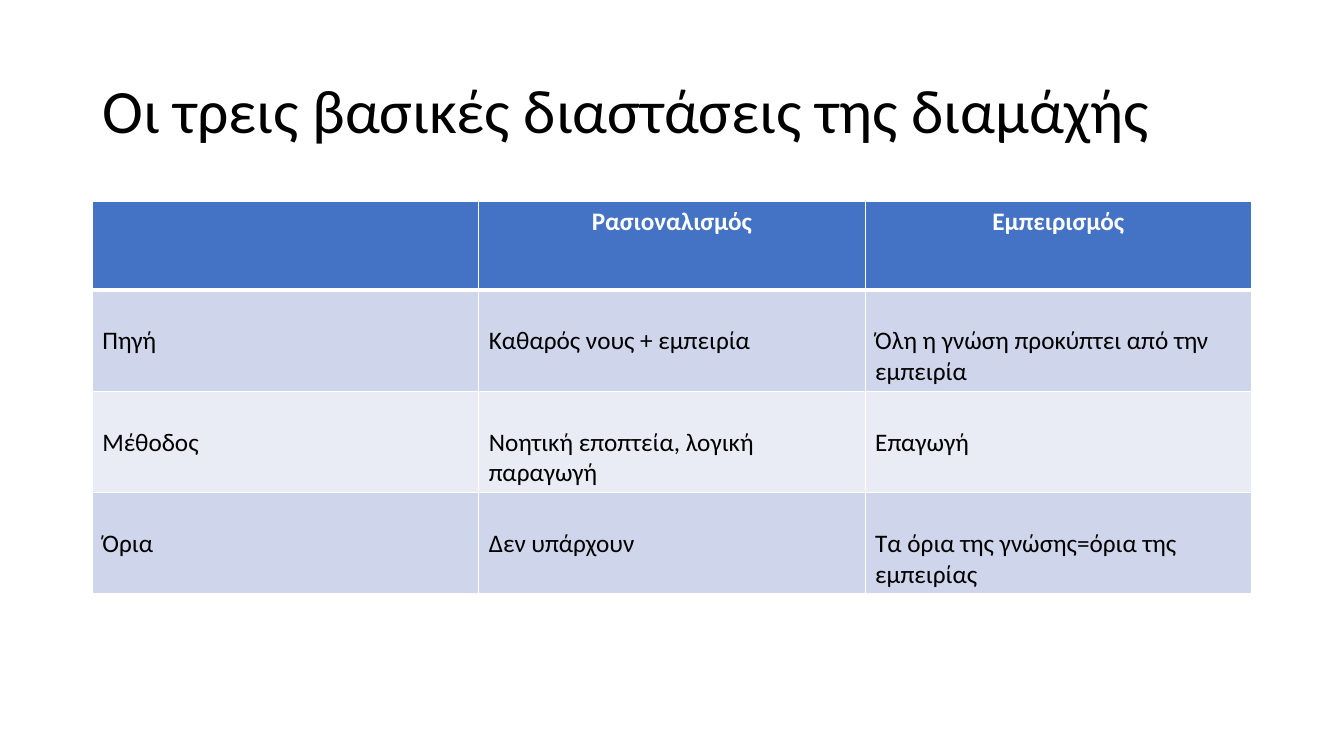
from dataclasses import dataclass

from lxml.etree import SubElement
from pptx import Presentation
from pptx.dml.color import RGBColor as RGB
from pptx.enum.text import MSO_ANCHOR as Anchor, PP_ALIGN as Align
from pptx.oxml.ns import qn
from pptx.util import Pt


@dataclass(frozen=True)
class Theme:
    font: str = "Calibri"
    title_size: float = 44
    table_size: float = 18
    ink: str = "000000"
    paper: str = "FFFFFF"
    header: str = "4472C4"
    bands: tuple = ("CFD5EA", "E9EBF5")
    rule: float = 1
    header_rule: float = 3
    line_height: float = 22
    cell_inset: float = 3.6


class SlideBuilder:
    def __init__(self, slide, theme):
        self.slide = slide
        self.theme = theme

    def set_text(self, frame, wording, size, color, bold=False, align=Align.LEFT):
        frame.text = wording
        frame.word_wrap = True
        paragraph = frame.paragraphs[0]
        paragraph.alignment = align
        for run in paragraph.runs:
            run.font.name = self.theme.font
            run.font.size = Pt(size)
            run.font.bold = bold
            run.font.color.rgb = RGB.from_string(color)
        return paragraph

    def title(self, wording, left, top, width, height):
        heading = self.slide.shapes.add_textbox(Pt(left), Pt(top), Pt(width), Pt(height))
        frame = heading.text_frame
        frame.vertical_anchor = Anchor.MIDDLE
        paragraph = self.set_text(frame, wording, self.theme.title_size, self.theme.ink)
        paragraph.line_spacing = 0.9

    def borders(self, cell, top, bottom):
        properties = cell._tc.get_or_add_tcPr()
        rule = self.theme.rule
        for side, width in (("L", rule), ("R", rule), ("T", top), ("B", bottom)):
            line = SubElement(properties, qn(f"a:ln{side}"), w=str(Pt(width)))
            fill = SubElement(line, qn("a:solidFill"))
            SubElement(fill, qn("a:srgbClr"), val=self.theme.paper)

    def cell(self, cell, wording, row):
        theme = self.theme
        is_header = row == 0
        self.borders(
            cell,
            theme.header_rule if row == 1 else theme.rule,
            theme.header_rule if is_header else theme.rule,
        )
        cell.fill.solid()
        color = theme.header if is_header else theme.bands[(row - 1) % 2]
        cell.fill.fore_color.rgb = RGB.from_string(color)
        cell.margin_top = Pt(theme.cell_inset + (0 if is_header else theme.line_height))
        self.set_text(
            cell.text_frame,
            wording,
            theme.table_size,
            theme.paper if is_header else theme.ink,
            is_header,
            Align.CENTER if is_header else Align.LEFT,
        )

    def table(self, rows, left, top, width, row_height):
        table = self.slide.shapes.add_table(
            len(rows), len(rows[0]), Pt(left), Pt(top), Pt(width), Pt(row_height * len(rows))
        ).table
        for row, wordings in enumerate(rows):
            for column, wording in enumerate(wordings):
                self.cell(table.cell(row, column), wording, row)


DIMENSIONS = [
    ("", "Ρασιοναλισμός", "Εμπειρισμός"),
    ("Πηγή", "Καθαρός νους + εμπειρία", "Όλη η γνώση προκύπτει από την εμπειρία"),
    ("Μέθοδος", "Νοητική εποπτεία, λογική παραγωγή", "Επαγωγή"),
    ("Όρια", "Δεν υπάρχουν", "Τα όρια της γνώσης=όρια της εμπειρίας"),
]


def main():
    deck = Presentation()
    deck.slide_width, deck.slide_height = Pt(960), Pt(540)
    builder = SlideBuilder(deck.slides.add_slide(deck.slide_layouts[6]), Theme())
    builder.title("Οι τρεις βασικές διαστάσεις της διαμάχής", 66, 28.75, 828, 104.4)
    builder.table(DIMENSIONS, 66, 143.75, 828, 63.25)
    deck.save("out.pptx")


if __name__ == "__main__":
    main()
